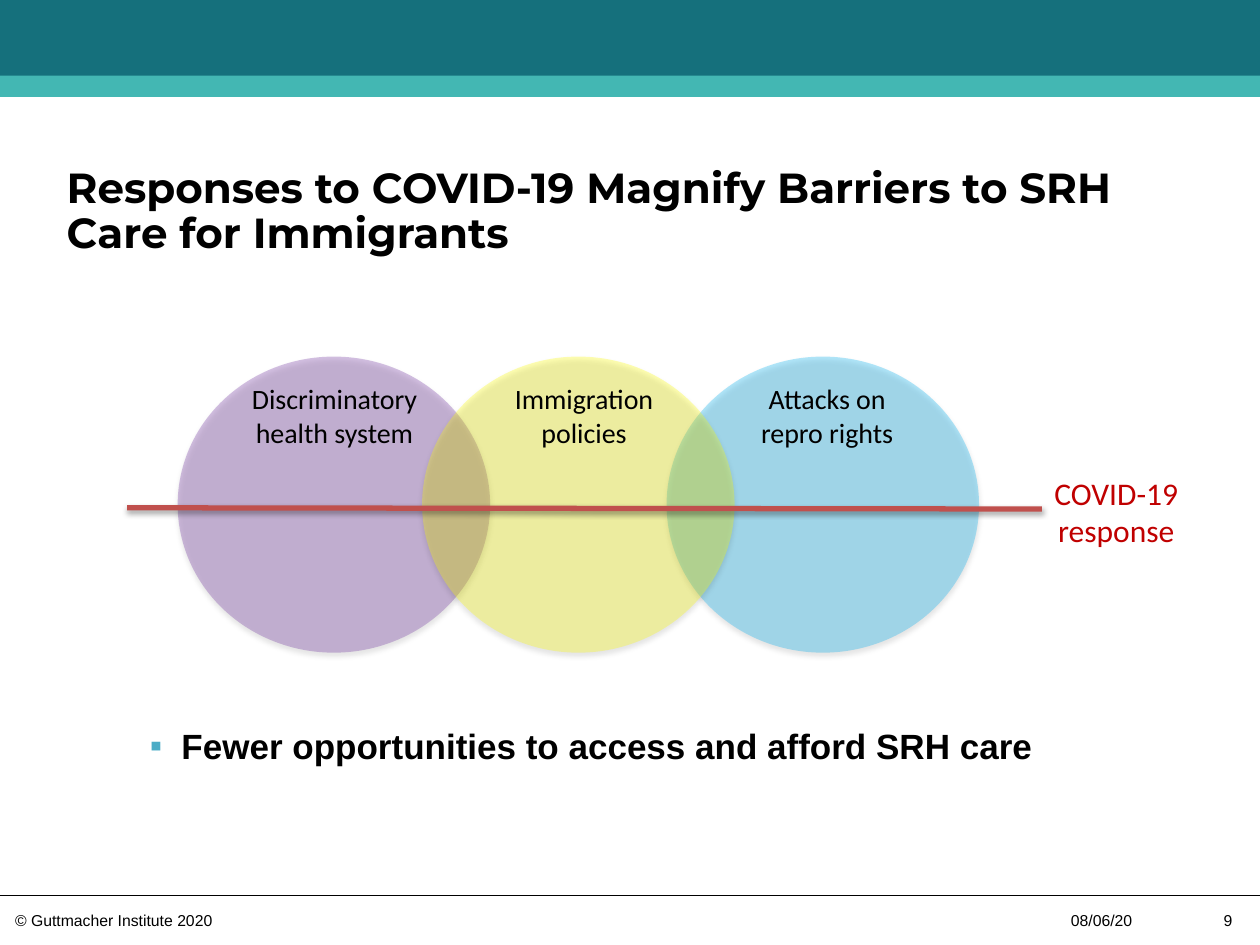
"""Build the slide on COVID-19 responses and barriers to SRH care for immigrants."""
from lxml.etree import SubElement
from pptx import Presentation
from pptx.dml.color import RGBColor
from pptx.enum.shapes import MSO_CONNECTOR as Link, MSO_SHAPE as Shape
from pptx.enum.text import MSO_ANCHOR as Anchor, PP_ALIGN as Align
from pptx.oxml.ns import qn
from pptx.util import Inches, Pt

deck = Presentation()
deck.slide_width, deck.slide_height = Inches(10), Inches(7.5)
column, row = deck.slide_width // 100, deck.slide_height // 75
slide = deck.slides.add_slide(deck.slide_layouts[6])
shapes = slide.shapes
rgb = RGBColor.from_string


def place(*lengths):
    return [round(length * unit) for length, unit in zip(lengths, (column, row) * 2)]


def write(text, box, size=9, font="Arial", color="000000", bold=False, align=Align.LEFT,
          anchor=Anchor.TOP, wrap=True, leading=None, bullet=None):
    frame = shapes.add_textbox(*place(*box)).text_frame
    frame.margin_left = frame.margin_right = frame.margin_top = frame.margin_bottom = 0
    frame.word_wrap, frame.vertical_anchor = wrap, anchor
    frame.text = text
    for paragraph in frame.paragraphs:
        paragraph.alignment = align
        if leading:
            paragraph.line_spacing = Pt(leading)
        if bullet:
            layout = paragraph._p.get_or_add_pPr()
            layout.set("marL", str(Inches(0.25)))
            layout.set("indent", str(-Inches(0.25)))
            tint = SubElement(layout, qn("a:buClr"))
            SubElement(tint, qn("a:srgbClr"), val=bullet)
            SubElement(layout, qn("a:buFont"), typeface="Arial")
            SubElement(layout, qn("a:buChar"), char="▪")
        paragraph.font.size, paragraph.font.name = Pt(size), font
        paragraph.font.bold, paragraph.font.color.rgb = bold, rgb(color)


write("© Guttmacher Institute 2020", (1.2, 72.3, 18.4, 1.5))
write("9", (94.3, 72.3, 3.5, 1.5), align=Align.RIGHT)
write("08/06/20", (85, 72.3, 6, 1.5))

footer_rule = shapes.add_connector(Link.STRAIGHT, *place(0, 71.1, 100, 71.1))
footer_rule.line.color.rgb, footer_rule.line.width = rgb("000000"), Pt(0.75)
SubElement(footer_rule._element.spPr, qn("a:effectLst"))

for top, height, color in ((0, 7.7, "15707C"), (6, 1.7, "43B7B3")):
    band = shapes.add_shape(Shape.RECTANGLE, *place(0, top, 100, height))
    band.shadow.inherit = False
    band.fill.solid()
    band.fill.fore_color.rgb = rgb(color)
    band.line.fill.background()

write("Fewer opportunities to access and afford SRH care", (11.9, 57.5, 76.2, 3.2),
      size=20, bold=True, bullet="4BACC6")
write("Responses to COVID-19 Magnify Barriers to SRH Care for Immigrants",
      (5.3, 12.9, 88.4, 7.5), size=24, font="Montserrat", bold=True,
      anchor=Anchor.BOTTOM, leading=26)

shadowed = []
for step, color in ((2, "00B0F0"), (0, "7030A0"), (1, "FFFF00")):
    barrier = shapes.add_shape(Shape.OVAL, *place(14.1 + 19.4 * step, 28.3, 24.8, 23.5))
    barrier.fill.solid()
    barrier.fill.fore_color.rgb = rgb(color)
    SubElement(barrier._element.spPr.find(".//" + qn("a:srgbClr")), qn("a:alpha"), val="30000")
    barrier.line.fill.background()
    shadowed.append((barrier, 1.8, 35))

for left, width, label in ((18.6, 15.9, "Discriminatory health system"),
                           (38.4, 15.9, "Immigration policies"),
                           (58.6, 14.1, "Attacks on repro rights")):
    write(label, (left, 30.3, width, 6.8), size=16, font="Calibri", align=Align.CENTER)

response_line = shapes.add_connector(Link.STRAIGHT, *place(10.1, 40.3, 82.7, 40.4))
response_line.line.color.rgb, response_line.line.width = rgb("C0504D"), Pt(3)
shadowed.append((response_line, 1.6, 38))

for part, distance, opacity in shadowed:
    effects = SubElement(part._element.spPr, qn("a:effectLst"))
    shadow = SubElement(effects, qn("a:outerShdw"), blurRad=str(Pt(3.1)),
                        dist=str(Pt(distance)), dir="5400000", rotWithShape="0")
    shade = SubElement(shadow, qn("a:srgbClr"), val="000000")
    SubElement(shade, qn("a:alpha"), val=str(opacity * 1000))

write("COVID-19\nresponse", (81.8, 37.6, 13.6, 6), size=18, font="Calibri",
      color="C00000", align=Align.CENTER, wrap=False)

deck.save("out.pptx")
